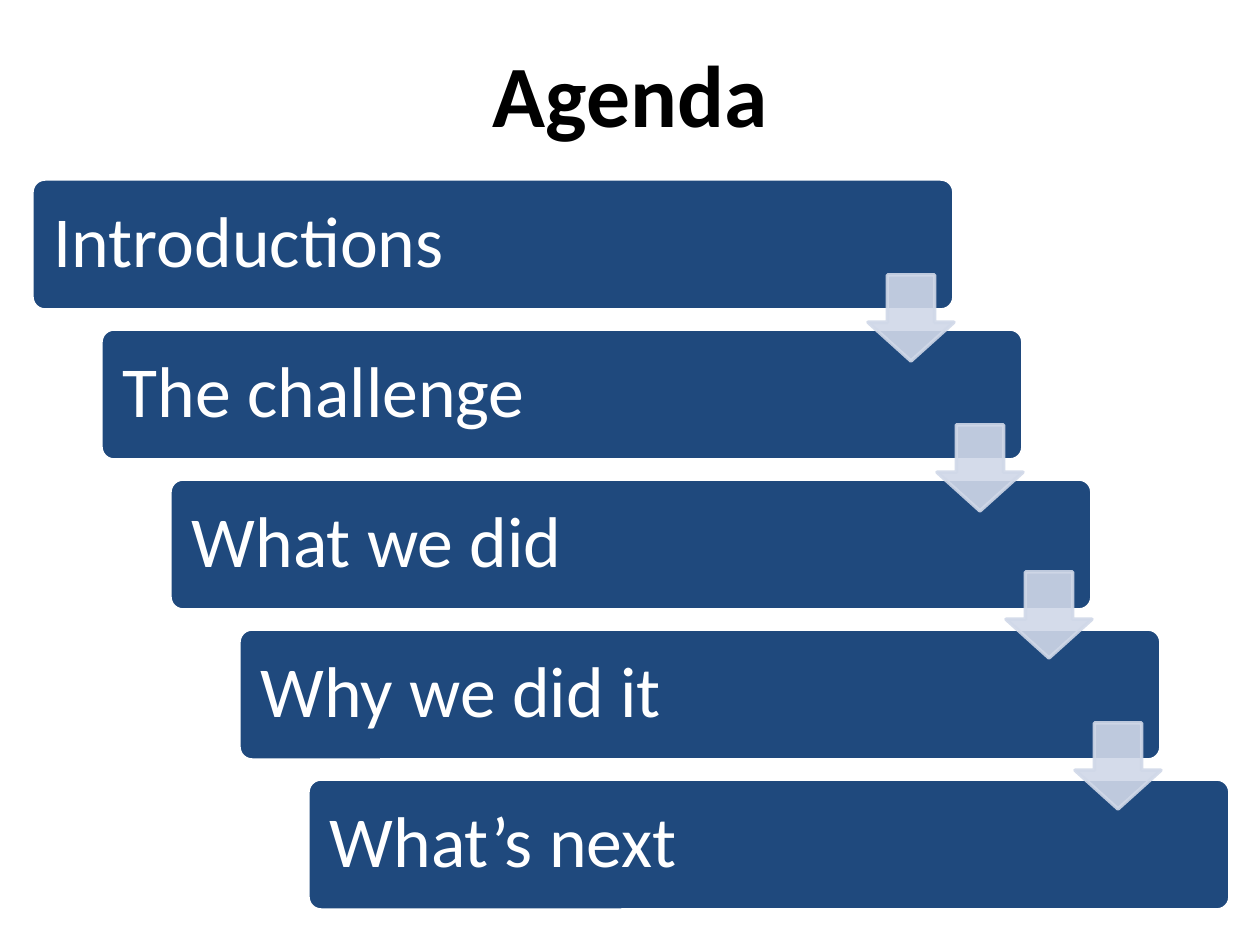
from lxml.etree import SubElement
from pptx import Presentation
from pptx.dml.color import RGBColor
from pptx.enum.shapes import MSO_SHAPE
from pptx.enum.text import MSO_ANCHOR, PP_ALIGN
from pptx.oxml.ns import qn
from pptx.util import Pt

TITLE = "Agenda"
STEPS = ["Introductions", "The challenge", "What we did", "Why we did it", "What’s next"]
COLORS = {"title": "000000", "bar": "1F497D", "edge": "FFFFFF",
          "text": "FFFFFF", "arrow": "D0D8E8"}
FONT = "Calibri"

# Lengths in px, 126 to the inch
SCALE = 914400 / 126
LEFT, TOP, WIDTH, HEIGHT = 32, 179, 922, 131
SHIFT, DROP = 69, 150
ARROW, ARROW_LEFT = 86, 868
ARROW_TOPS = [275, 425, 572, 723]
INSET = 18


def px(n):
    return round(n * SCALE)


def color(name):
    return RGBColor.from_string(COLORS[name])


def write(shape, text, size, name, align, bold=False):
    frame = shape.text_frame
    frame.word_wrap = True
    frame.vertical_anchor = MSO_ANCHOR.MIDDLE
    frame.text = text
    para = frame.paragraphs[0]
    para.alignment = align
    font = para.runs[0].font
    font.name, font.size, font.bold = FONT, Pt(size), bold
    font.color.rgb = color(name)
    return frame


def add_shape(slide, kind, box, adjust, fill, line):
    shape = slide.shapes.add_shape(kind, *map(px, box))
    shape.shadow.inherit = False
    for i, value in enumerate(adjust):
        shape.adjustments[i] = value
    shape.fill.solid()
    shape.fill.fore_color.rgb = color(fill)
    shape.line.color.rgb = color(line)
    shape.line.width = Pt(2)
    return shape


def add_bar(slide, i, text):
    box = (LEFT + i * SHIFT, TOP + i * DROP, WIDTH, HEIGHT)
    bar = add_shape(slide, MSO_SHAPE.ROUNDED_RECTANGLE, box, [0.1], "bar", "edge")
    frame = write(bar, text, 41, "text", PP_ALIGN.LEFT)
    frame.margin_left = frame.margin_right = px(INSET)
    frame.margin_top = frame.margin_bottom = px(INSET)
    frame.paragraphs[0].line_spacing = 0.9


def add_arrow(slide, i, top):
    box = (ARROW_LEFT + i * SHIFT, top, ARROW, ARROW)
    arrow = add_shape(slide, MSO_SHAPE.DOWN_ARROW, box, [0.55, 0.45], "arrow", "arrow")
    for tint in arrow.element.spPr.iter(qn("a:srgbClr")):
        SubElement(tint, qn("a:alpha"), val="90000")


def main():
    deck = Presentation()
    deck.slide_width, deck.slide_height = px(1260), px(945)
    slide = deck.slides.add_slide(deck.slide_layouts[6])
    title = slide.shapes.add_textbox(px(32), px(30), px(1197), px(126))
    write(title, TITLE, 50, "title", PP_ALIGN.CENTER, bold=True)
    for i, text in enumerate(STEPS):
        add_bar(slide, i, text)
    for i, top in enumerate(ARROW_TOPS):
        add_arrow(slide, i, top)
    deck.save("out.pptx")


if __name__ == "__main__":
    main()
